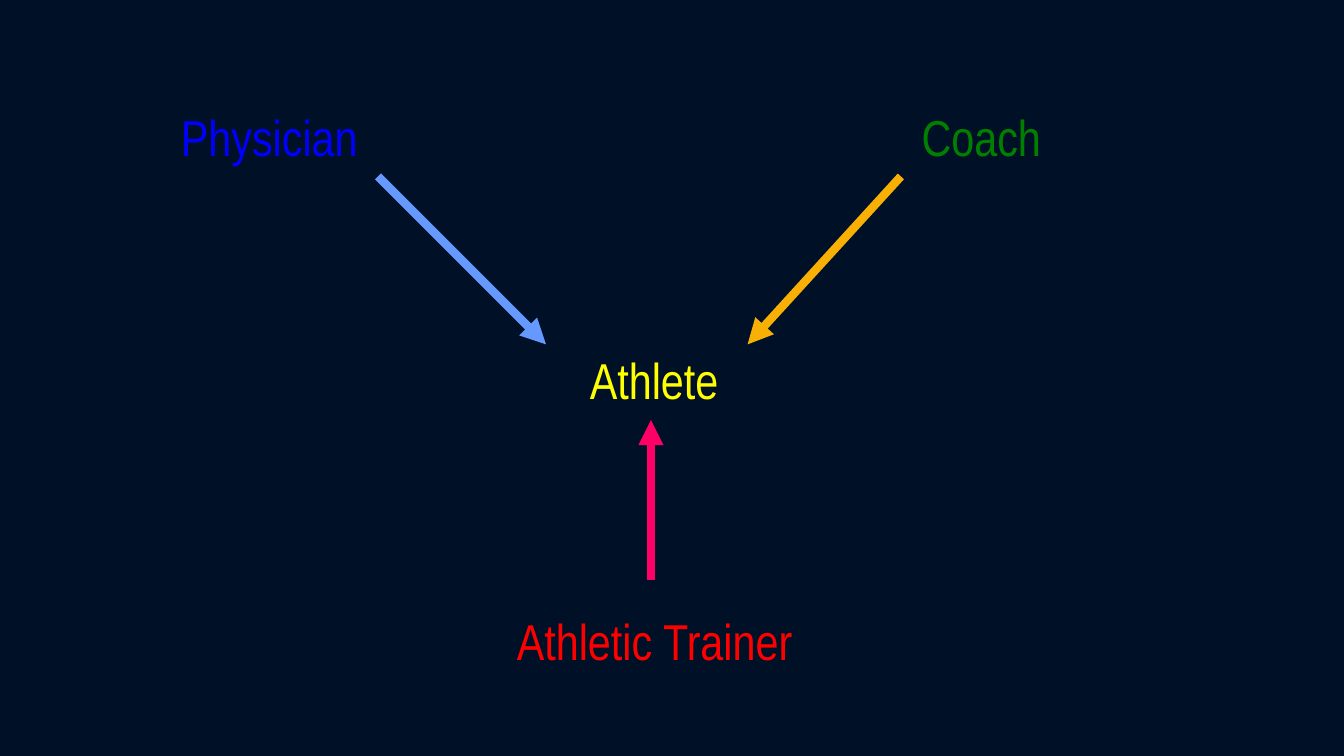
from lxml.etree import SubElement as Sub
from pptx import Presentation
from pptx.dml.color import RGBColor as Rgb
from pptx.enum.shapes import MSO_CONNECTOR as Conn
from pptx.enum.text import MSO_ANCHOR as Anchor, PP_ALIGN as Align
from pptx.oxml.ns import qn
from pptx.util import Pt

PX = 9525  # EMU per px, 96 px to the inch

HUES = {
    "back": "001027",
    "yellow": "FFFF00",
    "blue": "0000FF",
    "green": "008000",
    "red": "FF0000",
    "sky": "6699FF",
    "amber": "F8B004",
    "pink": "FF0066",
}


class Board:
    """Holds the style and the current slide."""

    font = {"name": "Arial Narrow", "size": Pt(36)}
    frame = {"word_wrap": False, "vertical_anchor": Anchor.TOP,
             "margin_left": 0, "margin_right": 0}
    high = 60
    thick = 8

    def __init__(self, deck):
        self.slide = deck.slides.add_slide(deck.slide_layouts[6])
        self.paint(self.slide.background.fill, "back")

    def paint(self, fill, hue):
        fill.solid()
        fill.fore_color.rgb = Rgb.from_string(HUES[hue])

    def label(self, text, hue, left, top, wide):
        box = self.slide.shapes.add_textbox(
            *(n * PX for n in (left, top, wide, self.high)))
        frame = box.text_frame
        para = frame.paragraphs[0]
        para.alignment = Align.CENTER
        run = para.add_run()
        run.text = text
        for part, style in ((frame, self.frame), (run.font, self.font)):
            for key, value in style.items():
                setattr(part, key, value)
        self.paint(run.font.fill, hue)

    def arrow(self, hue, *ends):
        link = self.slide.shapes.add_connector(
            Conn.STRAIGHT, *(n * PX for n in ends))
        link.line.width = self.thick * PX
        self.paint(link.line.fill, hue)
        # Arrowhead at the far end, no shadow
        props = link._element.spPr
        Sub(props.find(qn("a:ln")), qn("a:tailEnd"), type="triangle")
        Sub(props, qn("a:effectLst"))


def main():
    deck = Presentation()
    deck.slide_width, deck.slide_height = 1280 * PX, 720 * PX
    board = Board(deck)

    # The athlete and the people around them
    for item in (
        ("Athlete", "yellow", 552, 328, 142),
        ("Physician", "blue", 160, 96, 193),
        ("Coach", "green", 872, 96, 125),
        ("Athletic Trainer", "red", 471, 576, 305),
    ):
        board.label(*item)

    # Arrows pointing to the athlete
    for item in (
        ("sky", 360, 168, 520, 328),
        ("amber", 858, 168, 712, 328),
        ("pink", 620, 552, 620, 400),
    ):
        board.arrow(*item)

    deck.save("out.pptx")


if __name__ == "__main__":
    main()
